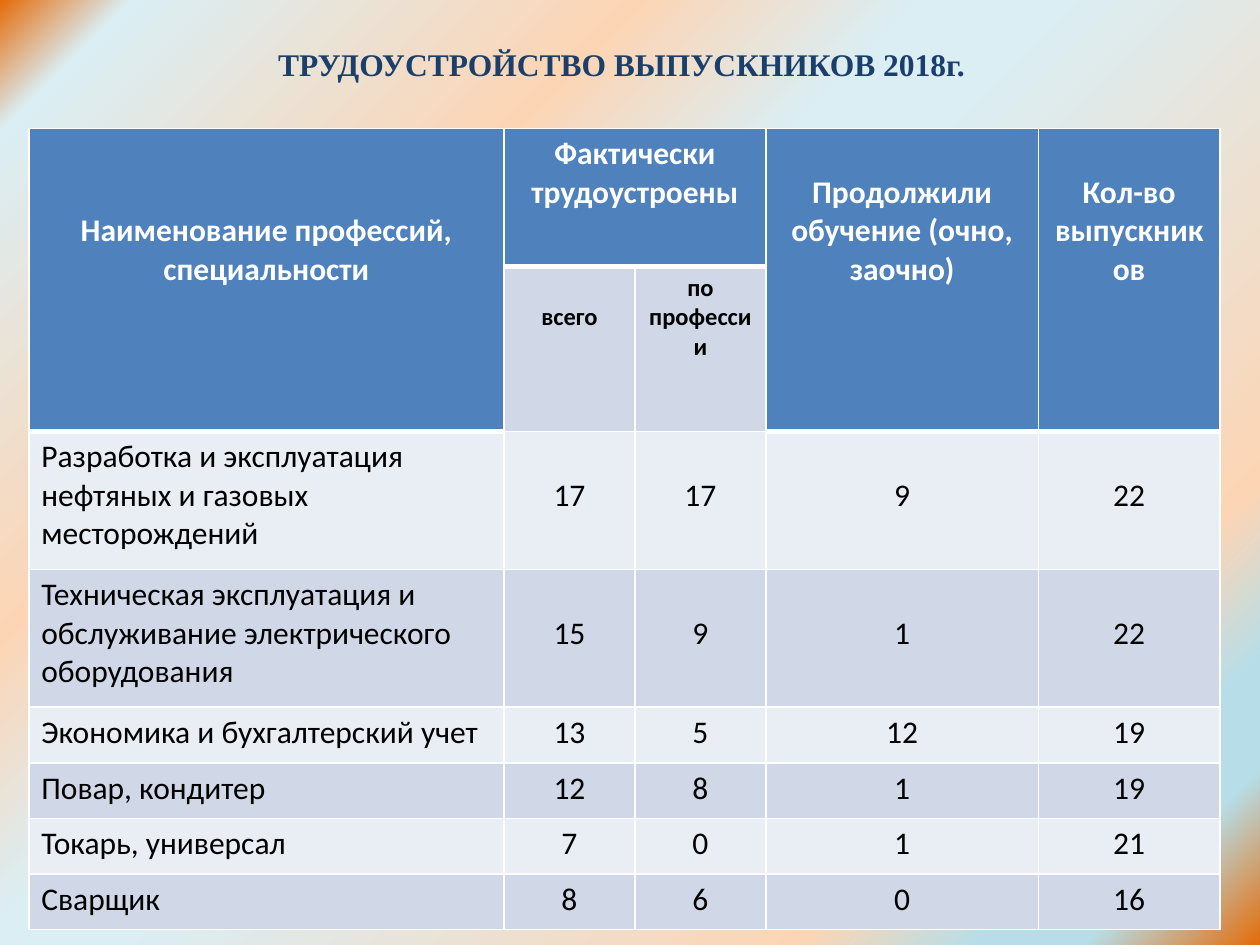
from dataclasses import dataclass

from lxml import etree
from pptx import Presentation
from pptx import util as u
from pptx.dml.color import RGBColor
from pptx.enum import text
from pptx.oxml.ns import qn


@dataclass(frozen=True)
class Theme:
    """Colours, fonts and type sizes of the slide."""
    title: str = "1B3F6B"
    header: str = "4F81BD"
    band_dark: str = "D0D8E8"
    band_light: str = "E9EDF4"
    white: str = "FFFFFF"
    black: str = "000000"
    title_font: str = "Times New Roman"
    body_font: str = "Calibri"
    size: int = 18
    small_size: int = 14
    thin: float = 1
    thick: float = 3
    backdrop: tuple = (
        (0, "E46C0A"), (6, "DBEEF4"), (29, "FCD5B5"), (42, "DBEEF4"), (48, "DBEEF4"),
        (79, "FCD5B5"), (87, "B7DEE8"), (92, "B7DEE8"), (100, "E46C0A"),
    )


THEME = Theme()
COLUMNS = (9.58, 2.64, 2.64, 5.49, 3.66)
ROWS = (2.78, 3.29, 2.78, 2.78, 1.12, 1.12, 1.12, 1.12)
INSET = 0.13
LINE_PER_POINT = 0.043
TALL_HEADERS = (
    (0, "Наименование профессий, специальности", 2),
    (3, "Продолжили обучение (очно, заочно)", 1),
    (4, "Кол-во выпускников", 1),
)
SUBHEADERS = ((1, "всего", 1), (2, "по профессии", 0))
GRADUATES = (
    ("Разработка и эксплуатация нефтяных и газовых месторождений", 17, 17, 9, 22),
    ("Техническая эксплуатация и обслуживание электрического оборудования", 15, 9, 1, 22),
    ("Экономика и бухгалтерский учет", 13, 5, 12, 19),
    ("Повар, кондитер", 12, 8, 1, 19),
    ("Токарь, универсал", 7, 0, 1, 21),
    ("Сварщик", 8, 6, 0, 16),
)


def paint_background(slide):
    """Fill the slide with the diagonal gradient."""
    fill = slide.background.fill
    fill.gradient()
    fill.gradient_angle = 315
    stops = slide.element.find(".//" + qn("a:gsLst"))
    for stop in list(stops):
        stops.remove(stop)
    for position, colour in THEME.backdrop:
        stop = etree.SubElement(stops, qn("a:gs"), pos=str(position * 1000))
        etree.SubElement(stop, qn("a:srgbClr"), val=colour)


def add_words(paragraph, words, colour, size=THEME.size, font=THEME.body_font, bold=True):
    """Add one formatted run to a paragraph."""
    run = paragraph.add_run()
    run.text = words
    run.font.name = font
    run.font.size = u.Pt(size)
    run.font.bold = bold
    run.font.color.rgb = RGBColor.from_string(colour)


def add_title(slide, left, top, width, height):
    """Place the slide title in the given box."""
    frame = slide.shapes.add_textbox(u.Cm(left), u.Cm(top), u.Cm(width), u.Cm(height)).text_frame
    frame.word_wrap = True
    frame.auto_size = text.MSO_AUTO_SIZE.SHAPE_TO_FIT_TEXT
    add_words(frame.paragraphs[0], "ТРУДОУСТРОЙСТВО ВЫПУСКНИКОВ 2018г.",
              THEME.title, font=THEME.title_font)


def style_cell(cell, colour, bottom=THEME.thin):
    """Give a cell its white borders and its fill."""
    properties = cell._tc.get_or_add_tcPr()
    for side in "LRTB":
        weight = bottom if side == "B" else THEME.thin
        border = etree.SubElement(properties, qn(f"a:ln{side}"), w=str(u.Pt(weight)))
        paint = etree.SubElement(border, qn("a:solidFill"))
        etree.SubElement(paint, qn("a:srgbClr"), val=THEME.white)
    cell.fill.solid()
    cell.fill.fore_color.rgb = RGBColor.from_string(colour)


def fill_cell(cell, words, colour, size=THEME.size, bold=True, centred=True, lead=0):
    """Write a cell's text, lowered by a number of lead lines."""
    cell.margin_top = u.Cm(INSET + lead * size * LINE_PER_POINT)
    paragraph = cell.text_frame.paragraphs[0]
    if centred:
        paragraph.alignment = text.PP_ALIGN.CENTER
    add_words(paragraph, words, colour, size, bold=bold)


def add_header(table):
    """Write the two header rows with their merged cells."""
    for column in range(len(COLUMNS)):
        style_cell(table.cell(0, column), THEME.header, THEME.thick)
    for column, words, lead in TALL_HEADERS:
        style_cell(table.cell(1, column), THEME.header, THEME.thick)
        table.cell(0, column).merge(table.cell(1, column))
        fill_cell(table.cell(0, column), words, THEME.white, lead=lead)
    table.cell(0, 1).merge(table.cell(0, 2))
    fill_cell(table.cell(0, 1), "Фактически трудоустроены", THEME.white)
    for column, words, lead in SUBHEADERS:
        style_cell(table.cell(1, column), THEME.band_dark)
        fill_cell(table.cell(1, column), words, THEME.black, THEME.small_size, lead=lead)


def add_employment_table(slide, left, top):
    """Place the graduate employment table at the given corner."""
    table = slide.shapes.add_table(
        len(ROWS), len(COLUMNS), u.Cm(left), u.Cm(top), u.Cm(sum(COLUMNS)), u.Cm(sum(ROWS))
    ).table
    for column, width in zip(table.columns, COLUMNS):
        column.width = u.Cm(width)
    for row, height in zip(table.rows, ROWS):
        row.height = u.Cm(height)
    add_header(table)
    for row, (profession, *counts) in enumerate(GRADUATES, 2):
        band = THEME.band_dark if row % 2 else THEME.band_light
        lead = 1 if row < 4 else 0
        for column, value in enumerate((profession, *counts)):
            cell = table.cell(row, column)
            style_cell(cell, band)
            fill_cell(cell, str(value), THEME.black, bold=False,
                      centred=column > 0, lead=lead if column else 0)


def main():
    """Build and save the presentation."""
    deck = Presentation()
    deck.slide_width, deck.slide_height = u.Cm(25.4), u.Cm(19.05)
    slide = deck.slides.add_slide(deck.slide_layouts[6])
    paint_background(slide)
    add_title(slide, 5.36, 0.79, 15.67, 1.02)
    add_employment_table(slide, 0.58, 2.59)
    deck.save("out.pptx")


if __name__ == "__main__":
    main()
